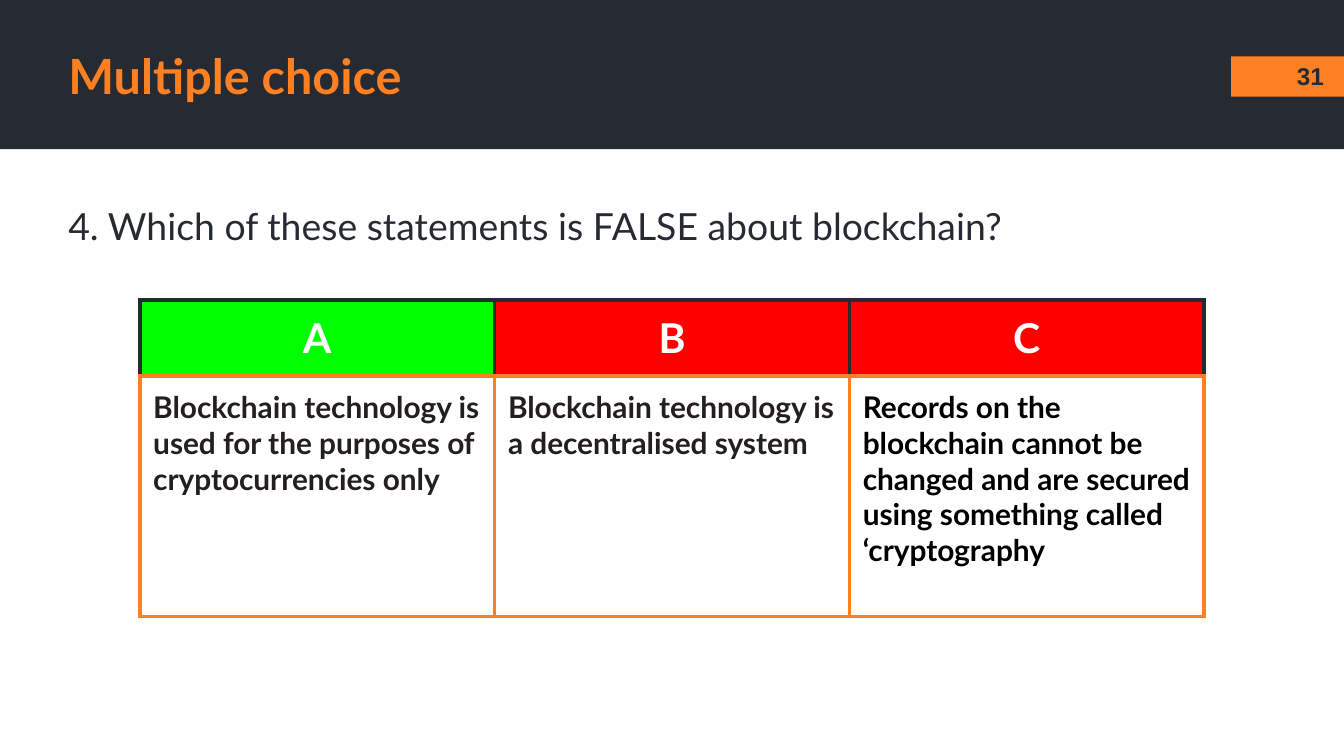
import pptx
import pptx.dml.color
import pptx.enum.shapes
import pptx.enum.text
import pptx.oxml
import pptx.oxml.ns
import pptx.util
from pptx.util import Inches

ALIGN = pptx.enum.text.PP_ALIGN
ANCHOR = pptx.enum.text.MSO_ANCHOR
DARK, ORANGE, WHITE = "262A33", "FF8022", "FFFFFF"
GREEN, RED, INK, BLACK = "00FF00", "FF0000", "231F20", "000000"
CHOICES = [
    ("A", GREEN, INK, "Blockchain technology is used for the purposes of cryptocurrencies only"),
    ("B", RED, INK, "Blockchain technology is a decentralised system"),
    ("C", RED, BLACK, "Records on the blockchain cannot be changed and are secured "
                      "using something called ‘cryptography"),
]


def rgb(color):
    return pptx.dml.color.RGBColor.from_string(color)


def style(p, size, color, bold=True, align=ALIGN.LEFT, font="Lato"):
    p.alignment = align
    p.font.name = font
    p.font.size = pptx.util.Pt(size)
    p.font.bold = bold
    p.font.color.rgb = rgb(color)


def add_rect(slide, x, y, w, h, color):
    sp = slide.shapes.add_shape(pptx.enum.shapes.MSO_SHAPE.RECTANGLE,
                                Inches(x), Inches(y), Inches(w), Inches(h))
    sp.shadow.inherit = False
    sp.fill.solid()
    sp.fill.fore_color.rgb = rgb(color)
    sp.line.fill.background()


def add_text(slide, x, y, w, h, text, size, color, anchor=ANCHOR.MIDDLE, **font):
    sp = slide.shapes.add_textbox(Inches(x), Inches(y), Inches(w), Inches(h))
    tf = sp.text_frame
    tf.word_wrap = True
    tf.vertical_anchor = anchor
    tf.margin_left = tf.margin_right = tf.margin_top = tf.margin_bottom = Inches(0.1)
    p = tf.paragraphs[0]
    p.text = text
    style(p, size, color, **font)


def set_borders(cell, left, right, top, bottom, width=2.25):
    tc_pr = cell._tc.get_or_add_tcPr()
    edges = (("lnL", left), ("lnR", right), ("lnT", top), ("lnB", bottom))
    for i, (tag, color) in enumerate(edges):
        ln = pptx.oxml.parse_xml(
            f'<a:{tag} {pptx.oxml.ns.nsdecls("a")} w="{pptx.util.Pt(width)}">'
            f'<a:solidFill><a:srgbClr val="{color}"/></a:solidFill></a:{tag}>')
        tc_pr.insert(i, ln)


def fill_cell(cell, text, fill, edge, size, color, align=ALIGN.LEFT):
    """Fill one cell; its top and sides take the edge colour, its bottom is orange."""
    cell.margin_left = cell.margin_right = Inches(0.1)
    cell.margin_top = cell.margin_bottom = Inches(0.1)
    if fill:
        cell.fill.solid()
        cell.fill.fore_color.rgb = rgb(fill)
    else:
        cell.fill.background()
    set_borders(cell, edge, edge, edge, ORANGE)
    p = cell.text_frame.paragraphs[0]
    p.text = text
    style(p, size, color, align=align)


def add_header(slide, x, y, w, h, title, number):
    add_rect(slide, x, y, w, h, DARK)
    add_rect(slide, x + w - 0.84, y + 0.42, 0.84, 0.3, ORANGE)
    add_text(slide, x + 0.41, y + 0.28, 8.74, 0.56, title, 26, ORANGE)
    add_text(slide, x + w - 0.51, y + 0.44, 0.52, 0.25, number, 13, DARK,
             align=ALIGN.CENTER, font="Arial")


def add_choices(slide, x, y, w, heights):
    table = slide.shapes.add_table(2, len(CHOICES), Inches(x), Inches(y),
                                   Inches(w), Inches(sum(heights))).table
    for row, height in zip(table.rows, heights):
        row.height = Inches(height)
    for col, (letter, fill, color, statement) in enumerate(CHOICES):
        table.columns[col].width = Inches(w / len(CHOICES))
        fill_cell(table.cell(0, col), letter, fill, DARK, 22, WHITE, ALIGN.CENTER)
        fill_cell(table.cell(1, col), statement, None, ORANGE, 16, color)


def main():
    prs = pptx.Presentation()
    prs.slide_width = Inches(10)
    prs.slide_height = prs.slide_width * 9 // 16
    slide = prs.slides.add_slide(prs.slide_layouts[6])
    add_header(slide, 0, 0, 10, 1.11, "Multiple choice", "31")
    add_choices(slide, 1.04, 2.23, 7.92, (0.56, 1.79))
    add_text(slide, 0.41, 1.41, 8.38, 0.88,
             "4. Which of these statements is FALSE about blockchain?",
             20, DARK, anchor=ANCHOR.TOP, bold=False)
    prs.save("out.pptx")


if __name__ == "__main__":
    main()
